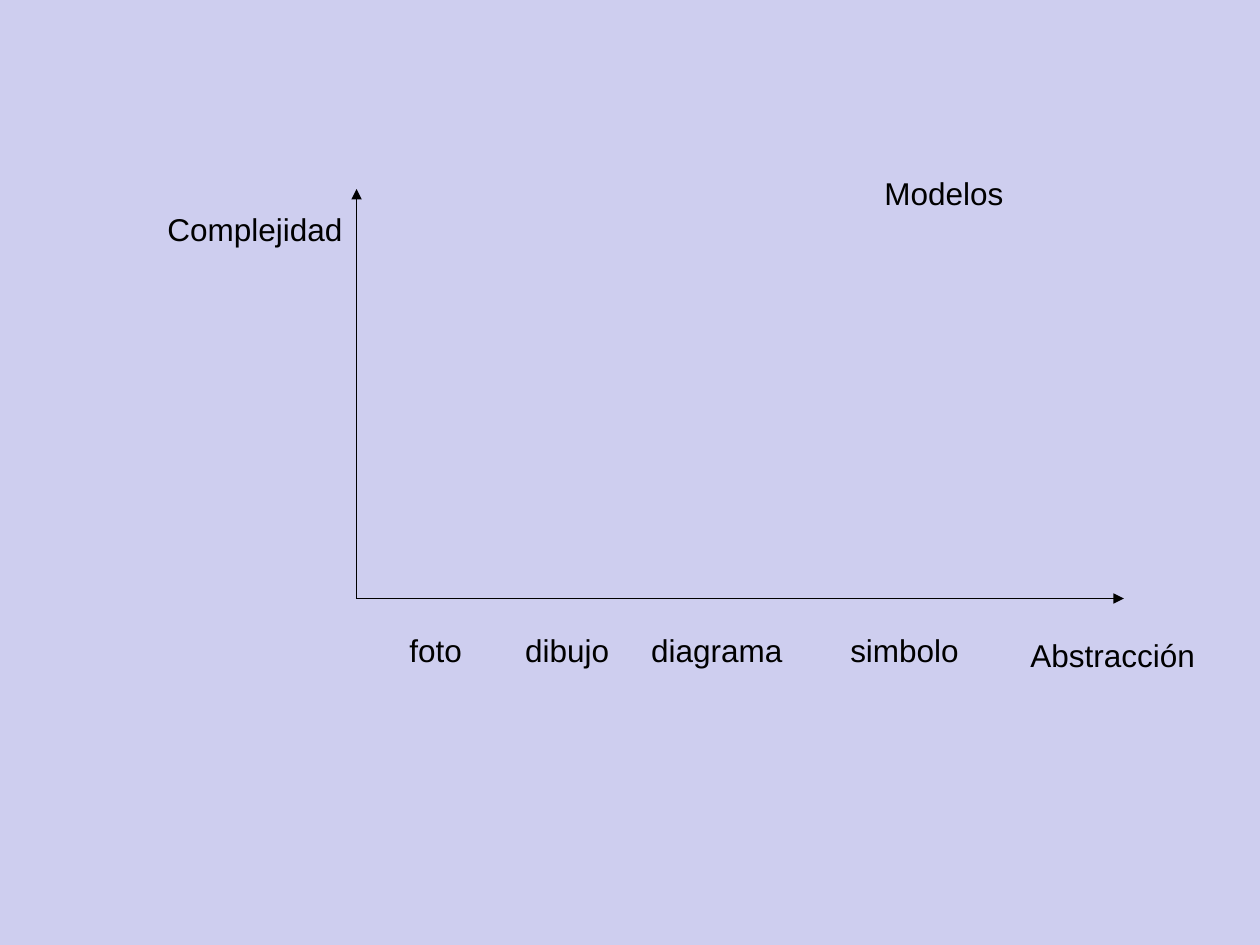
import pptx
import pptx.dml.color
import pptx.enum.shapes
import pptx.enum.text
import pptx.oxml.ns
import pptx.util
from lxml import etree

Inches = pptx.util.Inches
COLORS = {"background": "CECEEF", "ink": "000000"}


def color(name):
    return pptx.dml.color.RGBColor.from_string(COLORS[name])


def add_label(s, text, left, top, width, height=0.4):
    sp = s.shapes.add_textbox(Inches(left), Inches(top), Inches(width), Inches(height))
    tf = sp.text_frame
    tf.word_wrap = False
    tf.auto_size = pptx.enum.text.MSO_AUTO_SIZE.SHAPE_TO_FIT_TEXT
    p = tf.paragraphs[0]
    p.text = text
    p.font.name = "Arial"
    p.font.size = pptx.util.Pt(18)
    p.font.color.rgb = color("ink")


def add_arrow(s, x1, y1, x2, y2):
    line = s.shapes.add_connector(
        pptx.enum.shapes.MSO_CONNECTOR.STRAIGHT,
        Inches(x1), Inches(y1), Inches(x2), Inches(y2))
    line.line.color.rgb = color("ink")
    line.line.width = pptx.util.Pt(0.75)
    qn = pptx.oxml.ns.qn
    etree.SubElement(line.line._get_or_add_ln(), qn("a:tailEnd"), type="triangle")
    etree.SubElement(line._element.spPr, qn("a:effectLst"))


def add_axes(s, left, top, width, height):
    bottom = top + height
    add_arrow(s, left, bottom, left + width, bottom)
    add_arrow(s, left, bottom, left, top)
    add_label(s, "Complejidad", left - 1.6, top + 0.12, 1.59)
    add_label(s, "Abstracción", left + width - 0.84, bottom + 0.25, 1.51)


def add_models(s, top):
    models = [("foto", 3.15, 0.62), ("dibujo", 4.07, 0.87),
              ("diagrama", 5.07, 1.24), ("simbolo", 6.65, 1.06)]
    for text, left, width in models:
        add_label(s, text, left, top, width)


def main():
    prs = pptx.Presentation()
    prs.slide_width, prs.slide_height = Inches(10), Inches(7.5)
    s = prs.slides.add_slide(prs.slide_layouts[6])
    s.background.fill.solid()
    s.background.fill.fore_color.rgb = color("background")
    add_axes(s, 2.83, 1.5, 6.09, 3.25)
    add_label(s, "Modelos", 6.92, 1.33, 1.15)
    add_models(s, 4.96)
    prs.save("out.pptx")


if __name__ == "__main__":
    main()
